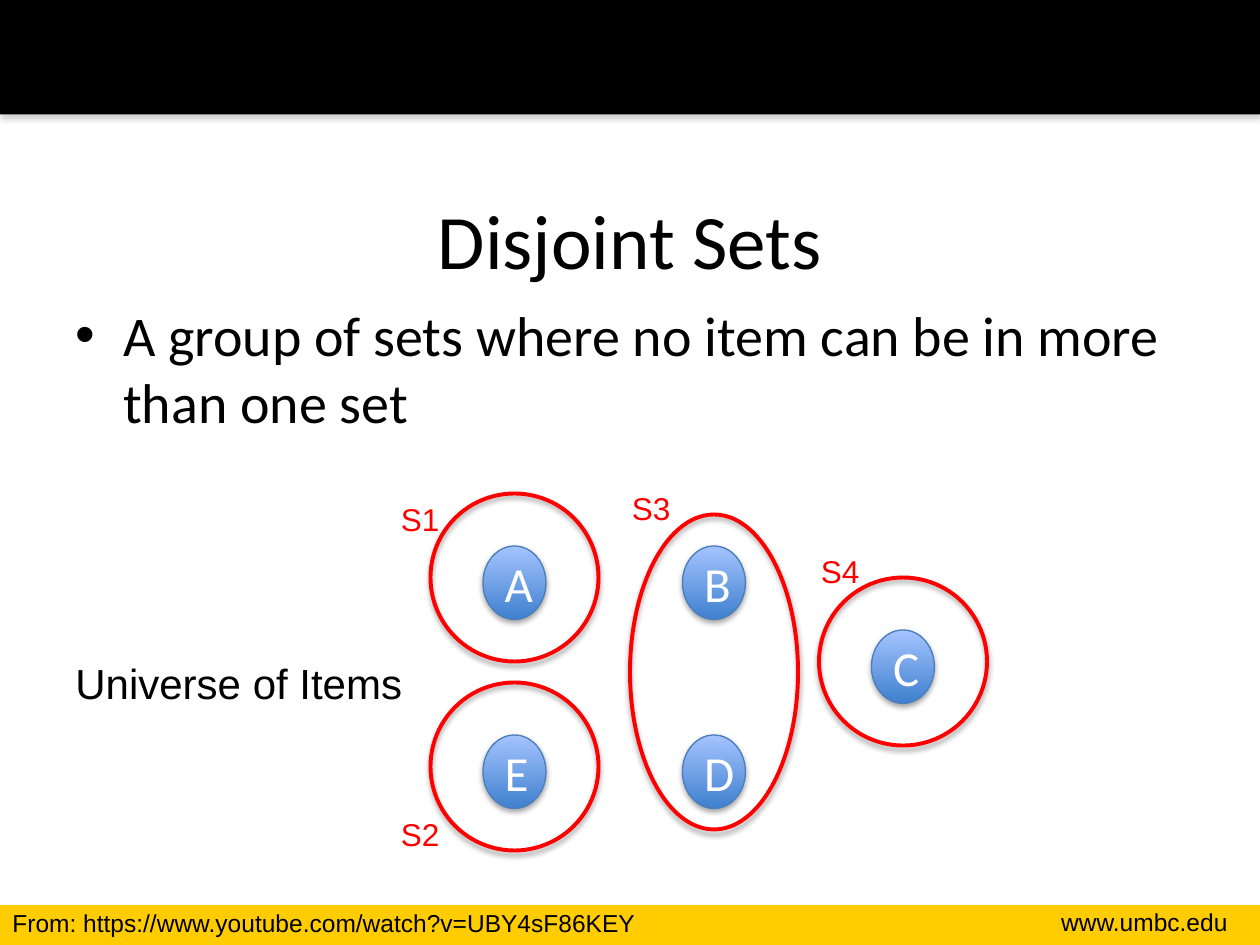
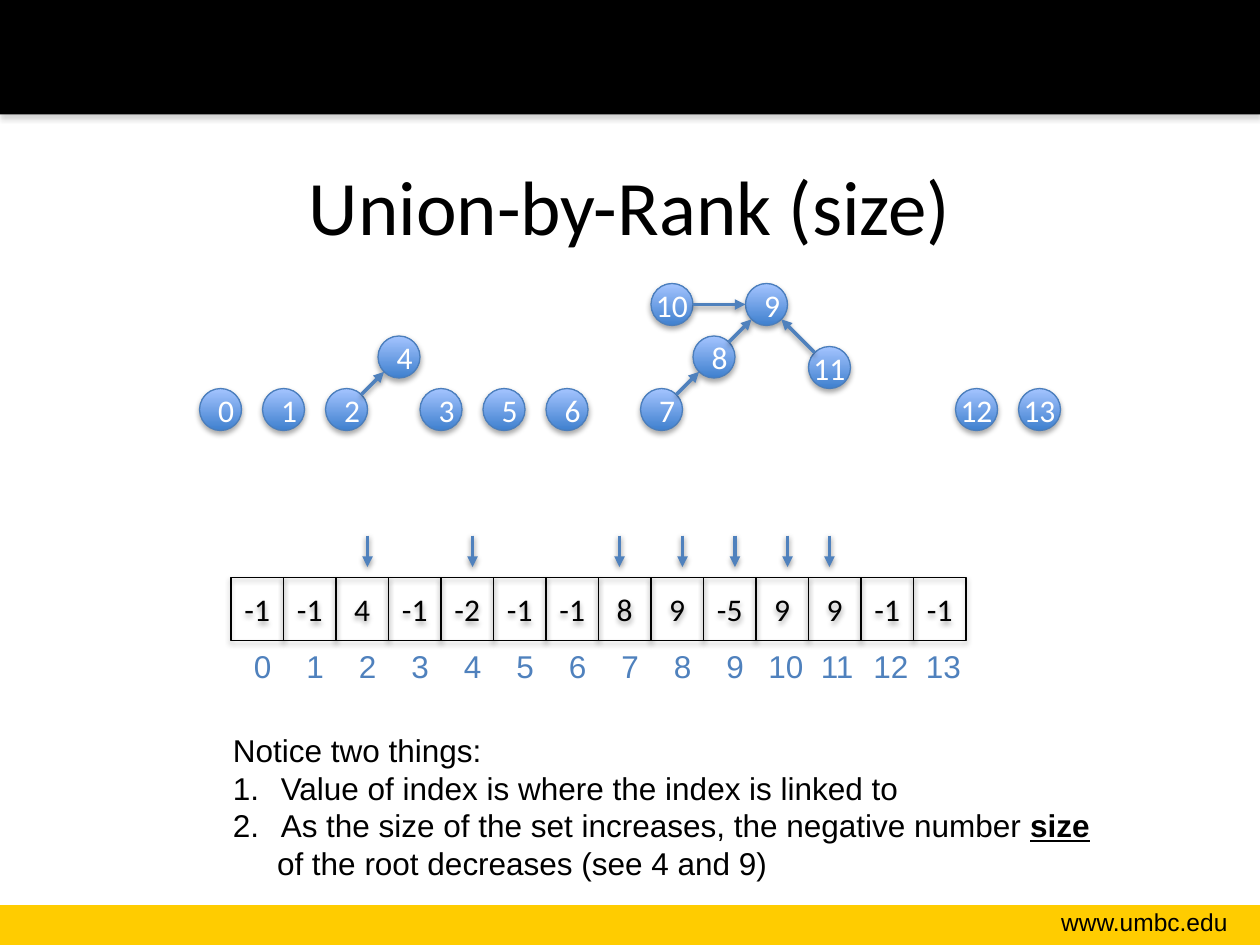
import math
from dataclasses import dataclass

import pptx
import pptx.dml.color
import pptx.enum.shapes
import pptx.enum.text
import pptx.oxml.ns
import pptx.util
from lxml import etree

SHAPE = pptx.enum.shapes.MSO_SHAPE
ALIGN = pptx.enum.text.PP_ALIGN
ANCHOR = pptx.enum.text.MSO_ANCHOR
AUTO_SIZE = pptx.enum.text.MSO_AUTO_SIZE

# The slide is a grid of 120 columns and 90 rows, twelve to the inch
COLUMNS, ROWS = 120, 90


@dataclass(frozen=True)
class Theme:
    ink: str = "000000"
    white: str = "FFFFFF"
    gold: str = "FFCC00"
    red: str = "FF0000"
    blue: str = "4F81BD"
    outline: str = "4B7EBC"
    gradient: tuple = ("3F80CE", "A4C4FF")
    band_shadow: str = "808080"
    heading_font: str = "Calibri"
    text_font: str = "Arial"
    title: int = 44
    body: int = 32
    item: int = 28
    caption: int = 24
    label: int = 18
    footer: int = 14


def rgb(value):
    return pptx.dml.color.RGBColor.from_string(value)


def grid(count):
    return pptx.util.Inches(count / 12)


def add_xml(parent, tag, **attributes):
    child = etree.SubElement(parent, pptx.oxml.ns.qn(tag))
    for name, value in attributes.items():
        child.set(name, str(value))
    return child


class Painter:
    """Holds the theme and the current slide; places elements on the grid."""

    def __init__(self, deck, theme):
        self.deck, self.theme, self.page = deck, theme, None

    def new_page(self, title, title_top):
        theme = self.theme
        self.page = self.deck.slides.add_slide(self.deck.slide_layouts[6])
        self.shape(SHAPE.RECTANGLE, (0, 86.2, COLUMNS, 3.8), fill=theme.gold)
        self.shape(SHAPE.RECTANGLE, (0, 0, COLUMNS, 10.9), fill=theme.ink,
                   shadow=theme.band_shadow)
        self.text((94.2, 85.8, 23.9, 4.1), "www.umbc.edu", theme.footer,
                  align=ALIGN.RIGHT, wrap=True)
        self.text((6, title_top, 108, 15), title, theme.title,
                  font=theme.heading_font, align=ALIGN.CENTER,
                  anchor=ANCHOR.MIDDLE, wrap=True, grow=False)

    def add_span(self, para, words, size, font, color, strong=False):
        span = para.add_run()
        span.text = words
        span.font.size = pptx.util.Pt(size)
        span.font.name = font
        span.font.color.rgb = rgb(color)
        if strong:
            span.font.bold = span.font.underline = True

    def add_shadow(self, properties, color, alpha=35, distance=23000):
        effects = properties.find(pptx.oxml.ns.qn("a:effectLst"))
        outer = add_xml(effects, "a:outerShdw", blurRad=40000, dist=distance,
                        dir=5400000, rotWithShape=0)
        shade = add_xml(outer, "a:srgbClr", val=color)
        add_xml(shade, "a:alpha", val=alpha * 1000)

    def add_bullet(self, para, margin, hanging=True, number=False, char=None):
        settings = para._p.get_or_add_pPr()
        settings.set("marL", str(pptx.util.Inches(margin)))
        settings.set("indent", str(-pptx.util.Inches(margin) if hanging else 0))
        if number or char:
            add_xml(settings, "a:buFont", typeface=self.theme.text_font)
        if number:
            add_xml(settings, "a:buAutoNum", type="arabicPeriod")
        elif char:
            add_xml(settings, "a:buChar", char=char)

    def text_box(self, place, wrap=False, grow=True, anchor=ANCHOR.TOP):
        box = self.page.shapes.add_textbox(*map(grid, place))
        frame = box.text_frame
        frame.word_wrap = wrap
        frame.auto_size = AUTO_SIZE.SHAPE_TO_FIT_TEXT if grow else AUTO_SIZE.NONE
        frame.vertical_anchor = anchor
        return frame

    def text(self, place, words, size, font=None, color=None, align=ALIGN.LEFT,
             bullet=None, **frame_options):
        para = self.text_box(place, **frame_options).paragraphs[0]
        para.alignment = align
        if bullet:
            self.add_bullet(para, 0.38, char=bullet)
        self.add_span(para, words, size, font or self.theme.text_font,
                      color or self.theme.ink)

    def remarks(self, place, lines):
        """Each line: its spans as (words, strong), and its bullet settings."""
        frame = self.text_box(place)
        for position, (spans, bullet) in enumerate(lines):
            para = frame.add_paragraph() if position else frame.paragraphs[0]
            if bullet:
                self.add_bullet(para, **bullet)
            for words, strong in spans:
                self.add_span(para, words, self.theme.label,
                              self.theme.text_font, self.theme.ink, strong)

    def shape(self, kind, place, fill=None, line=None, weight=0.75, shadow=None):
        shape = self.page.shapes.add_shape(kind, *map(grid, place))
        if fill is None:
            shape.fill.background()
        elif isinstance(fill, tuple):
            shape.fill.gradient()
            shape.fill.gradient_angle = 90
            for stop, color in zip(shape.fill.gradient_stops, fill):
                stop.color.rgb = rgb(color)
        else:
            shape.fill.solid()
            shape.fill.fore_color.rgb = rgb(fill)
        if line:
            shape.line.color.rgb = rgb(line)
            shape.line.width = pptx.util.Pt(weight)
        else:
            shape.line.fill.background()
        shape.shadow.inherit = False
        if shadow:
            self.add_shadow(shape._element.spPr, shadow)
        return shape

    def write_in(self, shape, words, size, color, wrap=True):
        frame = shape.text_frame
        frame.word_wrap = wrap
        frame.vertical_anchor = ANCHOR.MIDDLE
        para = frame.paragraphs[0]
        para.alignment = ALIGN.CENTER
        self.add_span(para, words, size, self.theme.heading_font, color)

    def ball(self, place, words, size):
        theme = self.theme
        shape = self.shape(SHAPE.OVAL, place, fill=theme.gradient,
                           line=theme.outline, shadow=theme.ink)
        self.write_in(shape, words, size, theme.white, wrap=len(words) == 1)

    def ring(self, place):
        self.shape(SHAPE.OVAL, place, line=self.theme.red, weight=2.25,
                   shadow=self.theme.ink)

    def cell(self, place, words):
        shape = self.shape(SHAPE.RECTANGLE, place, line=self.theme.ink,
                           shadow=self.theme.ink)
        self.write_in(shape, words, self.theme.label, self.theme.ink)

    def arrow(self, start, end):
        connector = self.page.shapes.add_connector(
            pptx.enum.shapes.MSO_CONNECTOR.STRAIGHT, *map(grid, (*start, *end)))
        connector.line.color.rgb = rgb(self.theme.blue)
        connector.line.width = pptx.util.Pt(2)
        properties = connector._element.spPr
        outline = properties.find(pptx.oxml.ns.qn("a:ln"))
        add_xml(outline, "a:tailEnd", type="triangle")
        add_xml(properties, "a:effectLst")
        self.add_shadow(properties, self.theme.ink, 38, 20000)


def draw_disjoint_sets(painter):
    theme = painter.theme
    painter.new_page("Disjoint Sets", 15.2)
    painter.text((6, 28, 108, 13.8),
                 "A group of sets where no item can be in more than one set",
                 theme.body, font=theme.heading_font, bullet="•", wrap=True,
                 grow=False)

    # Items of the universe
    items = {"A": (46, 52), "B": (65, 52), "C": (83, 60), "D": (65, 70),
             "E": (46, 70)}
    for name, corner in items.items():
        painter.ball((*corner, 6, 7), name, theme.item)
    painter.text((6, 62, 33.8, 6), "Universe of Items", theme.caption)

    # Sets: label corner, ring corner, ring height
    sets = {"S1": ((37, 47), (41, 47), 16), "S2": ((37, 77), (41, 65), 16),
            "S3": ((59, 46), (60, 49), 30), "S4": ((77, 52), (78, 55), 16)}
    for name, (label_corner, ring_corner, height) in sets.items():
        painter.ring((*ring_corner, 16, height))
        painter.text((*label_corner, 6.1, 4.8), name, theme.label,
                     color=theme.red)

    painter.text((0, 85.9, 62, 4.1),
                 "From: https://www.youtube.com/watch?v=UBY4sF86KEY",
                 theme.footer)


def draw_union_by_rank(painter):
    theme = painter.theme
    painter.new_page("Union-by-Rank (size)", 12)

    # Forest of nodes, listed by index
    node_size = 4
    nodes = [(19, 37), (25, 37), (31, 37), (40, 37), (36, 32), (46, 37),
             (52, 37), (61, 37), (66, 32), (71, 27), (62, 27), (77, 33),
             (91, 37), (97, 37)]
    for index, corner in enumerate(nodes):
        painter.ball((*corner, node_size, node_size), str(index), theme.label)

    # Array of parents, or negative set sizes at the roots
    values = [-1, -1, 4, -1, -2, -1, -1, 8, 9, -5, 9, 9, -1, -1]
    for index, value in enumerate(values):
        left = 22 + 5 * index
        painter.cell((left, 55, 5, 6), str(value))
        place = (left + 1, 61, 4.1, 4.8) if index < 10 else (left, 61, 5.8, 4.8)
        painter.text(place, str(index), theme.label, color=theme.blue)

    # Links run from rim to rim, child to parent
    for child, parent in enumerate(values):
        if parent < 0:
            continue
        (x1, y1), (x2, y2) = [[side + node_size / 2 for side in nodes[index]]
                              for index in (child, parent)]
        angle = math.atan2(y2 - y1, x2 - x1)
        dx = node_size / 2 * math.cos(angle)
        dy = node_size / 2 * math.sin(angle)
        painter.arrow((x1 + dx, y1 + dy), (x2 - dx, y2 - dy))

    # Pointers to the changed entries
    for column in (35, 45, 59, 65, 70, 75, 79):
        painter.arrow((column, 51), (column, 54))

    # Remarks below the array
    numbered = {"margin": 0.38, "number": True}
    painter.remarks((21, 69, 84.4, 15.7), [
        ([("Notice two things:", False)], None),
        ([("Value of index is where the index is linked to", False)], numbered),
        ([("As the size of the set increases, the negative number ", False),
          ("size", True)], numbered),
        ([("of the root decreases (see 4 and 9)", False)],
         {"margin": 0.35, "hanging": False}),
    ])


def main():
    deck = pptx.Presentation()
    deck.slide_width, deck.slide_height = grid(COLUMNS), grid(ROWS)
    painter = Painter(deck, Theme())
    draw_disjoint_sets(painter)
    draw_union_by_rank(painter)
    deck.save("out.pptx")


if __name__ == "__main__":
    main()
